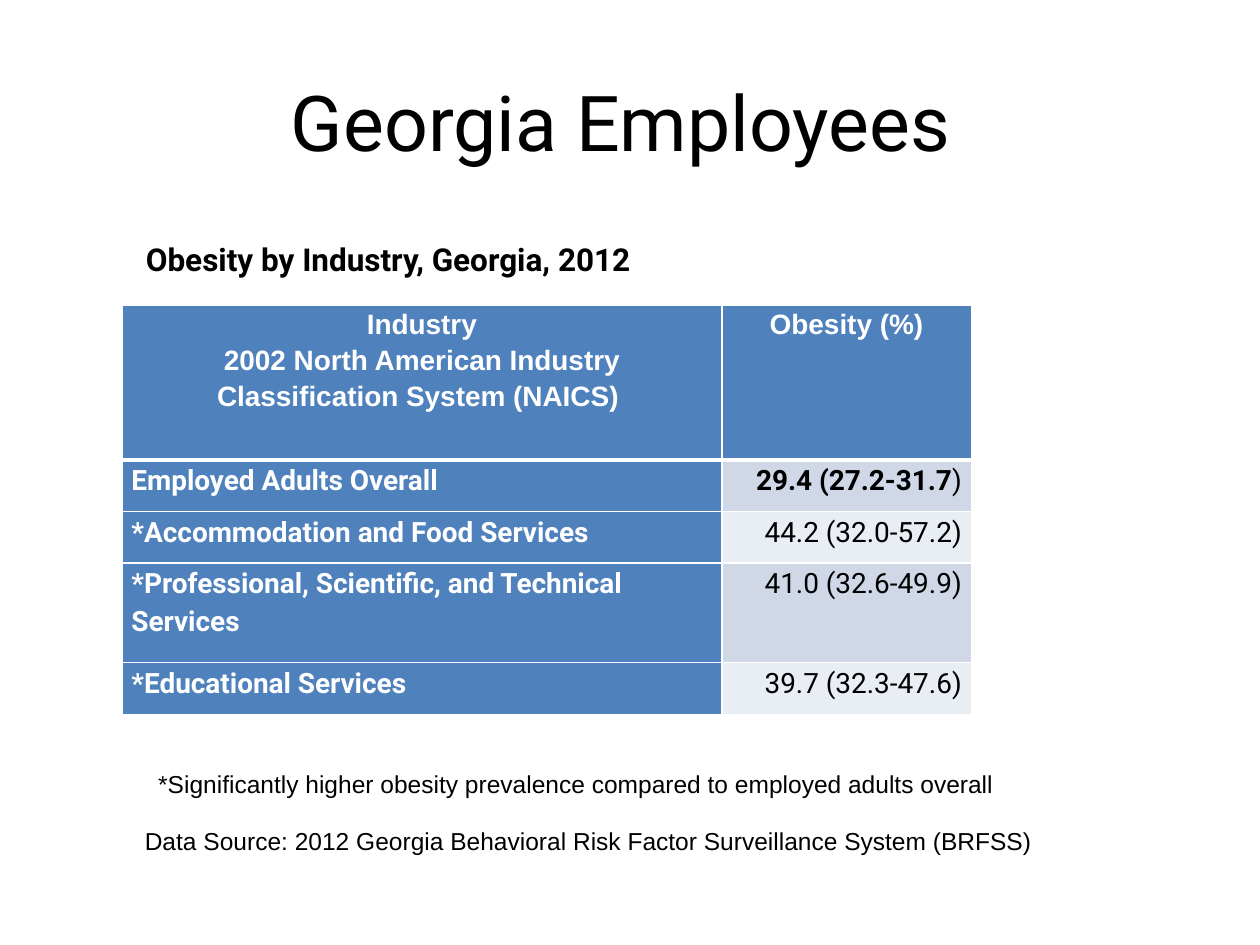
"""Build the Georgia Employees obesity slide."""
import pptx
import pptx.dml.color
import pptx.enum.text
import pptx.oxml.ns
import pptx.util
from lxml import etree

Cm, Pt = pptx.util.Cm, pptx.util.Pt
ALIGN = pptx.enum.text.PP_ALIGN
ANCHOR = pptx.enum.text.MSO_ANCHOR
AUTO = pptx.enum.text.MSO_AUTO_SIZE

TITLE = "Georgia Employees "
SUBTITLE = "Obesity by Industry, Georgia, 2012"
HEADER = [
    ["Industry", "2002 North American Industry Classification System (NAICS) "],
    ["Obesity (%)"],
]
ROWS = [
    ("Employed Adults Overall", [("29.4 (27.2-31.7", True), (")", False)]),
    ("*Accommodation and Food Services", [("44.2 (32.0-57.2)", False)]),
    ("*Professional, Scientific, and Technical Services", [("41.0 (32.6-49.9)", False)]),
    ("*Educational Services", [("39.7 (32.3-47.6)", False)]),
]
NOTES = [
    ("*Significantly higher obesity prevalence compared to employed adults overall", 0.27, 0),
    ("Data Source: 2012 Georgia Behavioral Risk Factor Surveillance System (BRFSS)", 0, 16),
]
COL_WIDTHS = [12.09, 5.03]
ROW_HEIGHTS = [3.12, 1.04, 1.04, 2.01, 1.04]
BLACK, WHITE, BLUE = "000000", "FFFFFF", "4F81BD"
BANDS = ["D0D8E8", "E9EDF4"]


def rgb(color):
    return pptx.dml.color.RGBColor.from_string(color)


def place(sp, left, top, width, height):
    sp.left, sp.top, sp.width, sp.height = Cm(left), Cm(top), Cm(width), Cm(height)


def add_run(p, text, size, font, color=BLACK, bold=False):
    r = p.add_run()
    r.text = text
    r.font.size, r.font.name, r.font.bold = Pt(size), font, bold
    r.font.color.rgb = rgb(color)


def add_border(cell, side, width):
    ln = etree.SubElement(cell._tc.get_or_add_tcPr(), pptx.oxml.ns.qn(f"a:ln{side}"), w=str(Pt(width)))
    fill = etree.SubElement(ln, pptx.oxml.ns.qn("a:solidFill"))
    etree.SubElement(fill, pptx.oxml.ns.qn("a:srgbClr"), val=WHITE)


def fill_cell(cell, row, color, paragraphs, align, font):
    cell.margin_left = cell.margin_right = Cm(0.19)
    cell.margin_top = cell.margin_bottom = 0
    widths = {"L": 1, "R": 1, "T": 3 if row == 1 else 1, "B": 3 if row == 0 else 1}
    for side, width in widths.items():
        add_border(cell, side, width)
    cell.fill.solid()
    cell.fill.fore_color.rgb = rgb(color)
    tf = cell.text_frame
    for i, runs in enumerate(paragraphs):
        p = tf.add_paragraph() if i else tf.paragraphs[0]
        p.alignment, p.line_spacing = align, 1.15
        for text, text_color, bold in runs:
            add_run(p, text, 16, font, text_color, bold)


def add_title(s):
    sp = s.shapes.title
    place(sp, 0.43, 1.07, 24.56, 2.74)
    tf = sp.text_frame
    tf.vertical_anchor = ANCHOR.MIDDLE
    p = tf.paragraphs[0]
    p.alignment = ALIGN.CENTER
    add_run(p, TITLE, 44, "Roboto")


def add_table(s):
    frame = s.shapes.add_table(len(ROW_HEIGHTS), len(COL_WIDTHS), Cm(2.46), Cm(6.15),
                               Cm(sum(COL_WIDTHS)), Cm(sum(ROW_HEIGHTS)))
    table = frame.table
    for column, width in zip(table.columns, COL_WIDTHS):
        column.width = Cm(width)
    for row, height in zip(table.rows, ROW_HEIGHTS):
        row.height = Cm(height)
    for c, lines in enumerate(HEADER):
        paragraphs = [[(line, WHITE, True)] for line in lines]
        fill_cell(table.cell(0, c), 0, BLUE, paragraphs, ALIGN.CENTER, "Arial")
    for r, (industry, values) in enumerate(ROWS, 1):
        fill_cell(table.cell(r, 0), r, BLUE, [[(industry, WHITE, True)]], ALIGN.LEFT, "Roboto")
        runs = [(text, BLACK, bold) for text, bold in values]
        fill_cell(table.cell(r, 1), r, BANDS[(r - 1) % 2], [runs], ALIGN.RIGHT, "Roboto")


def add_subtitle(s):
    sp = s.shapes.add_textbox(Cm(2.69), Cm(4.72), Cm(10.92), Cm(1.02))
    tf = sp.text_frame
    tf.word_wrap, tf.auto_size = False, AUTO.SHAPE_TO_FIT_TEXT
    add_run(tf.paragraphs[0], SUBTITLE, 18, "Roboto", bold=True)


def add_notes(s):
    sp = s.shapes.add_textbox(Cm(2.67), Cm(14.81), Cm(21.16), Cm(2.64))
    tf = sp.text_frame
    tf.word_wrap, tf.margin_top = True, Cm(0.69)
    for i, (text, indent, before) in enumerate(NOTES):
        p = tf.add_paragraph() if i else tf.paragraphs[0]
        p._p.get_or_add_pPr().set("marL", str(Cm(indent)))
        p.space_before = Pt(before)
        add_run(p, text, 14, "Arial")


def main():
    prs = pptx.Presentation()
    prs.slide_width, prs.slide_height = Cm(25.4), Cm(19.05)
    s = prs.slides.add_slide(prs.slide_layouts[5])
    add_title(s)
    add_table(s)
    add_subtitle(s)
    add_notes(s)
    prs.save("out.pptx")


if __name__ == "__main__":
    main()
